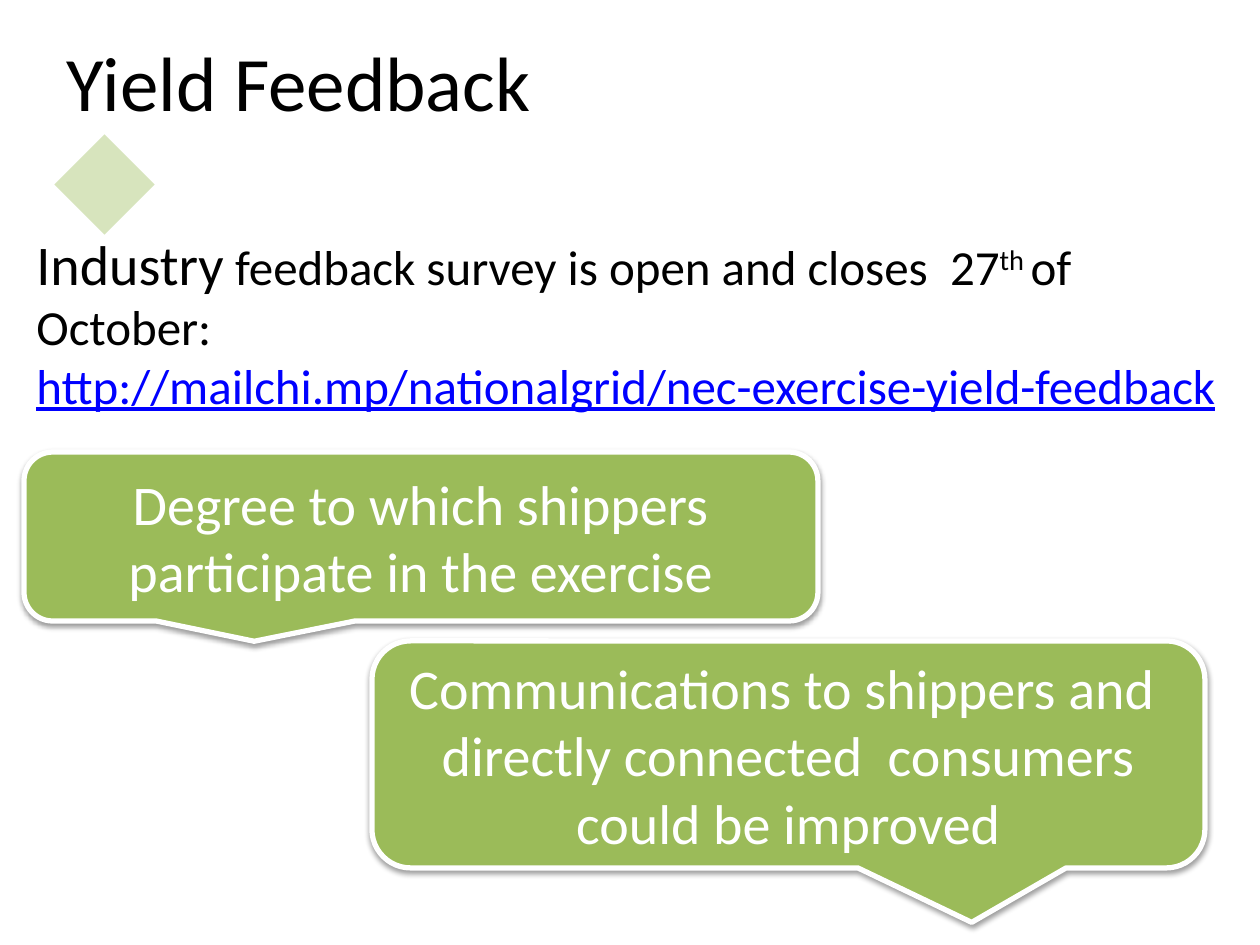
"""Build the Yield Feedback slide with its survey notice and two callouts."""
import pptx
import pptx.dml.color
import pptx.enum.shapes
import pptx.enum.text
import pptx.oxml
import pptx.oxml.ns
import pptx.util

PX = 914400 // 126
FONT = "Calibri"
BLACK = pptx.dml.color.RGBColor(0x00, 0x00, 0x00)
WHITE = pptx.dml.color.RGBColor(0xFF, 0xFF, 0xFF)
GREEN = pptx.dml.color.RGBColor(0x9B, 0xBB, 0x59)
PALE_GREEN = pptx.dml.color.RGBColor(0xD7, 0xE4, 0xBD)
LINK_BLUE = pptx.dml.color.RGBColor(0x00, 0x00, 0xFF)

TITLE = ("Yield Feedback", (54, 6, 1012, 149))
DIAMOND_BOX = (69, 149, 71, 71)
NOTICE_BOX = (24, 223, 1236, 199)
NOTICE = [
    ("Industry", 32, False),
    (" feedback survey is open and closes  27", 28, False),
    ("th ", 28, True),
    ("of October:", 28, False),
]
SURVEY_ADDRESS = "http://mailchi.mp/nationalgrid/nec-exercise-yield-feedback"
CALLOUTS = [
    ("Degree to which shippers participate in the exercise",
     (24, 452, 794, 169), (-0.21, 0.62, 0.17)),
    ("Communications to shippers and  directly connected  consumers could be improved",
     (372, 641, 833, 227), (0.22, 0.74, 0.17)),
]
SHADOW = (
    f'<a:effectLst {pptx.oxml.ns.nsdecls("a")}>'
    '<a:outerShdw blurRad="40000" dist="20000" dir="5400000" rotWithShape="0">'
    '<a:srgbClr val="000000"><a:alpha val="38000"/></a:srgbClr>'
    '</a:outerShdw></a:effectLst>'
)


def scaled(box):
    return [length * PX for length in box]


def set_font(font, size, color):
    font.name = FONT
    font.size = pptx.util.Pt(size)
    font.color.rgb = color


def add_title(slide):
    text, box = TITLE
    title = slide.shapes.title
    title.left, title.top, title.width, title.height = scaled(box)
    title.text_frame.text = text
    title.text_frame.vertical_anchor = pptx.enum.text.MSO_ANCHOR.MIDDLE
    paragraph = title.text_frame.paragraphs[0]
    paragraph.alignment = pptx.enum.text.PP_ALIGN.LEFT
    set_font(paragraph.font, 44, BLACK)


def add_diamond(slide):
    diamond = slide.shapes.add_shape(
        pptx.enum.shapes.MSO_SHAPE.RECTANGLE, *scaled(DIAMOND_BOX))
    diamond.rotation = 45
    diamond.shadow.inherit = False
    diamond.fill.solid()
    diamond.fill.fore_color.rgb = PALE_GREEN
    diamond.line.fill.background()


def add_callout(slide, text, box, adjustments):
    callout = slide.shapes.add_shape(
        pptx.enum.shapes.MSO_SHAPE.ROUNDED_RECTANGULAR_CALLOUT, *scaled(box))
    for index, value in enumerate(adjustments):
        callout.adjustments[index] = value
    callout.fill.solid()
    callout.fill.fore_color.rgb = GREEN
    callout.line.color.rgb = WHITE
    callout.line.width = pptx.util.Pt(3)
    callout._element.spPr.append(pptx.oxml.parse_xml(SHADOW))
    frame = callout.text_frame
    frame.word_wrap = True
    frame.vertical_anchor = pptx.enum.text.MSO_ANCHOR.MIDDLE
    frame.text = text
    paragraph = frame.paragraphs[0]
    paragraph.alignment = pptx.enum.text.PP_ALIGN.CENTER
    set_font(paragraph.font, 32, WHITE)


def add_notice(slide):
    frame = slide.shapes.add_textbox(*scaled(NOTICE_BOX)).text_frame
    frame.word_wrap = True
    frame.auto_size = pptx.enum.text.MSO_AUTO_SIZE.SHAPE_TO_FIT_TEXT
    paragraph = frame.paragraphs[0]
    for text, size, raised in NOTICE:
        run = paragraph.add_run()
        run.text = text
        set_font(run.font, size, BLACK)
        if raised:
            run.font._element.set("baseline", "30000")
    address = frame.add_paragraph()
    address.text = SURVEY_ADDRESS
    set_font(address.font, 28, LINK_BLUE)
    address.font.underline = True


def main():
    presentation = pptx.Presentation()
    presentation.slide_width = pptx.util.Inches(10)
    presentation.slide_height = pptx.util.Inches(7.5)
    slide = presentation.slides.add_slide(presentation.slide_layouts[5])
    add_diamond(slide)
    add_title(slide)
    for text, box, adjustments in CALLOUTS:
        add_callout(slide, text, box, adjustments)
    add_notice(slide)
    presentation.save("out.pptx")


if __name__ == "__main__":
    main()
